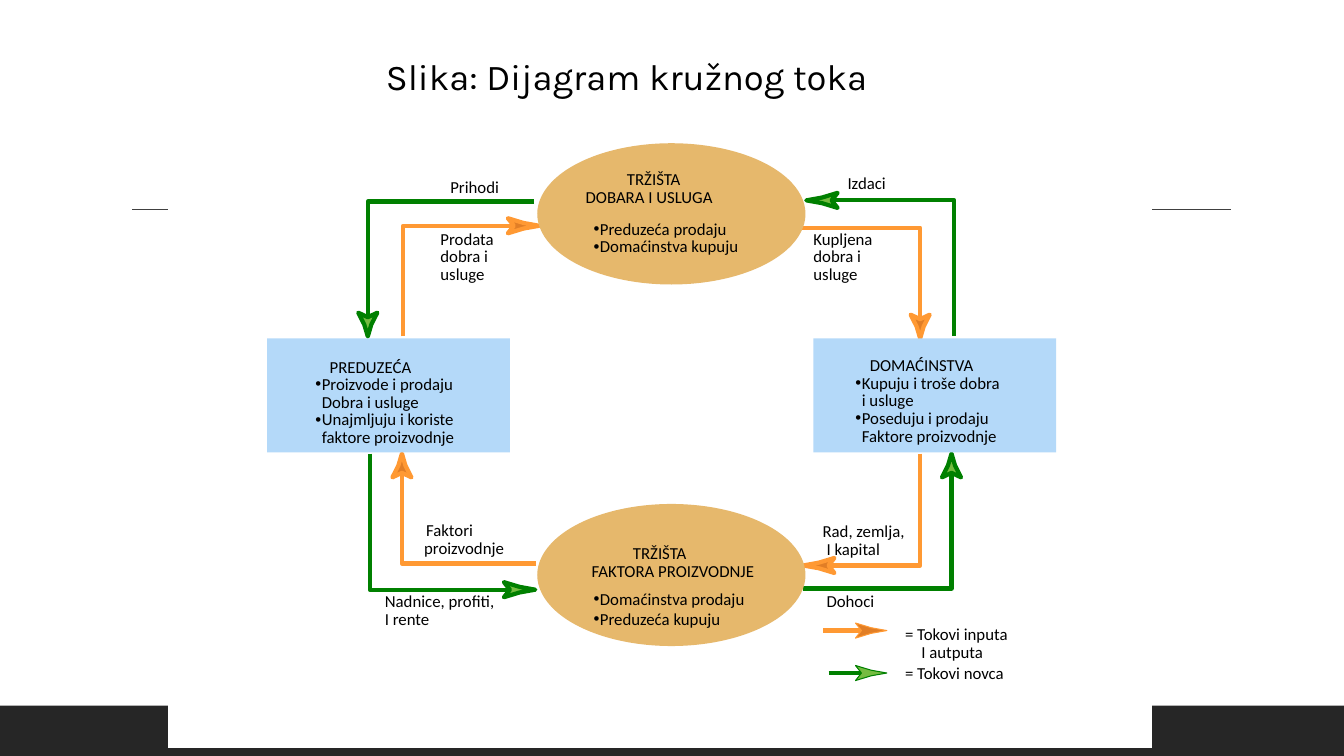
from pptx import Presentation
from pptx.dml.color import RGBColor
from pptx.enum.shapes import MSO_CONNECTOR, MSO_SHAPE
from pptx.enum.text import MSO_ANCHOR, PP_ALIGN
from pptx.oxml.ns import qn
from pptx.util import Cm, Pt
from lxml import etree

RECTANGLE, OVAL = MSO_SHAPE.RECTANGLE, MSO_SHAPE.OVAL
STRAIGHT = MSO_CONNECTOR.STRAIGHT
LEFT, CENTER = PP_ALIGN.LEFT, PP_ALIGN.CENTER
TOP, MIDDLE = MSO_ANCHOR.TOP, MSO_ANCHOR.MIDDLE

BLACK = RGBColor(0x00, 0x00, 0x00)
WHITE = RGBColor(0xFF, 0xFF, 0xFF)
CHARCOAL = RGBColor(0x26, 0x26, 0x26)
GRAY = RGBColor(0x40, 0x40, 0x40)
BLUE = RGBColor(0xB4, 0xD9, 0xF9)
SAND = RGBColor(0xE6, 0xB8, 0x6C)
# Line colour and arrowhead fill of each kind of flow
MONEY = RGBColor(0x00, 0x80, 0x00), RGBColor(0x75, 0xBC, 0x40)
GOODS = RGBColor(0xFF, 0x99, 0x33), RGBColor(0xE1, 0x7E, 0x26)

NATURAL_LINE = 0.52  # height of a 12 pt line in cm
PITCH = 0.45
HANG = 0.16
NOTCH = 0.81  # depth of the arrowhead's notch as a share of its length


class DiagramSlide:
    def __init__(self, deck):
        self.page = deck.slides.add_slide(deck.slide_layouts[6])
        self.shapes = self.page.shapes

    def shape(self, kind, bounds, fill):
        shape = self.shapes.add_shape(kind, *map(Cm, bounds))
        shape.shadow.inherit = False
        shape.fill.solid()
        shape.fill.fore_color.rgb = fill
        shape.line.fill.background()

    def line(self, start, end, color, weight):
        line = self.shapes.add_connector(STRAIGHT, *map(Cm, start + end))
        line.line.color.rgb = color
        line.line.width = Pt(weight)
        etree.SubElement(line._element.spPr, qn("a:effectLst"))

    def outline(self, points, color, weight=3, fill=None):
        """Draw a path; it is closed when it has a fill."""
        corners = [(Cm(x), Cm(y)) for x, y in points]
        builder = self.shapes.build_freeform(*corners[0])
        builder.add_line_segments(corners[1:], close=fill is not None)
        shape = builder.convert_to_shape()
        shape.shadow.inherit = False
        shape.line.color.rgb = color
        shape.line.width = Pt(weight)
        if fill is None:
            shape.fill.background()
        else:
            shape.fill.solid()
            shape.fill.fore_color.rgb = fill

    def arrowhead(self, before, tip, colors, weight=3):
        """Draw a head pointing from before to tip; return its notch point."""
        dx, dy = tip[0] - before[0], tip[1] - before[1]
        horizontal = abs(dx) > abs(dy)
        length, half = (0.79, 0.19) if horizontal else (0.6, 0.24)
        sign = 1 if dx + dy > 0 else -1

        def place(back, side):
            along, across = -sign * back * length, side * half
            if horizontal:
                return tip[0] + along, tip[1] + across
            return tip[0] + across, tip[1] + along

        profile = [(NOTCH, 0), (1, -1), (0.5, -0.37), (0, 0), (0.5, 0.37), (1, 1)]
        points = [place(back, side) for back, side in profile]
        self.outline(points, colors[0], weight, fill=colors[1])
        return points[0]

    def flow(self, colors, start, corner, tip):
        notch = self.arrowhead(corner, tip, colors)
        self.outline([start, corner, notch], colors[0])

    def text(self, bounds, lines, font="Calibri", size=12, align=LEFT,
             anchor=TOP, margins=(0, 0), spacing=None, indents=(), bullets=False):
        box = self.shapes.add_textbox(*map(Cm, bounds))
        frame = box.text_frame
        frame.word_wrap = True
        frame.vertical_anchor = anchor
        frame.margin_left = frame.margin_right = Cm(margins[0])
        frame.margin_top = frame.margin_bottom = Cm(margins[1])
        for index, line in enumerate(lines):
            para = frame.paragraphs[0] if index == 0 else frame.add_paragraph()
            para.text = line
            para.alignment = align
            para.line_spacing = spacing
            properties = para._p.get_or_add_pPr()
            if bullets:
                properties.set("marL", str(Cm(HANG)))
                properties.set("indent", str(-Cm(HANG)))
                etree.SubElement(properties, qn("a:buFont"), typeface="Arial")
                etree.SubElement(properties, qn("a:buChar"), char="•")
            elif indents:
                properties.set("marL", str(Cm(indents[index])))
            for span in para.runs:
                span.font.name = font
                span.font.size = Pt(size)
                span.font.color.rgb = BLACK

    def label(self, left, top, width, lines, pitch=PITCH, **style):
        """Place 12 pt lines at a fixed pitch, the first one at its natural height."""
        count = sum(1 + line.count("\v") for line in lines)
        bounds = left, top + NATURAL_LINE - pitch, width, count * pitch
        self.text(bounds, lines, spacing=Cm(pitch), **style)


def main():
    deck = Presentation()
    deck.slide_width, deck.slide_height = Cm(33.87), Cm(19.05)
    slide = DiagramSlide(deck)

    slide.shape(RECTANGLE, (0, 17.78, 33.87, 1.27), CHARCOAL)
    slide.line((3.33, 5.28), (31.01, 5.28), GRAY, 1)
    slide.text((0.56, 1.07, 30.48, 1.9), ["Slika: Dijagram kružnog toka"],
               font="Karla", size=26, align=CENTER, anchor=MIDDLE,
               margins=(0.3, 0.15), spacing=0.8)
    slide.shape(RECTANGLE, (4.24, 2.64, 24.79, 16.21), WHITE)

    for flow in [
        (MONEY, (13.46, 5.08), (9.27, 5.08), (9.27, 8.48)),
        (GOODS, (10.16, 8.48), (10.16, 5.69), (13.59, 5.69)),
        (MONEY, (9.32, 11.43), (9.32, 14.86), (13.49, 14.86)),
        (GOODS, (13.51, 14.2), (10.13, 14.2), (10.13, 11.43)),
        (MONEY, (24.05, 8.46), (24.05, 5.05), (20.32, 5.05)),
        (GOODS, (20.22, 5.74), (23.19, 5.74), (23.19, 8.53)),
        (MONEY, (20.24, 14.83), (23.98, 14.83), (23.98, 11.43)),
        (GOODS, (23.19, 11.43), (23.19, 14.25), (20.24, 14.25)),
    ]:
        slide.flow(*flow)

    for colors, left, middle in [(GOODS, 20.75, 15.89), (MONEY, 20.88, 16.96)]:
        slide.line((left, middle), (left + 0.99, middle), colors[0], 3)
        slide.arrowhead((left, middle), (22.35, middle), colors, weight=0.75)

    for left, top, width, lines, indents in [
        (21.36, 4.34, 1.2, ["Izdaci"], ()),
        (20.5, 5.74, 1.7, ["Kupljena", "dobra i", "usluge"], ()),
        (11.35, 4.45, 1.4, ["Prihodi"], ()),
        (11.1, 5.74, 1.6, ["Prodata", "dobra i", "usluge"], ()),
        (20.73, 13.11, 2.3, ["Rad, zemlja,", "I kapital"], (0, 0.1)),
        (20.83, 14.88, 1.5, ["Dohoci"], ()),
        (22.81, 15.7, 3, ["= Tokovi inputa", "I autputa"], (0, 0.41)),
        (22.81, 16.69, 3, ["= Tokovi novca"], ()),
        (10.69, 13.08, 2.3, ["Faktori", "proizvodnje"], (0.05, 0)),
        (9.7, 14.88, 3.1, ["Nadnice, profiti,", "I rente"], ()),
    ]:
        slide.label(left, top, width, lines, indents=indents)

    for kind, bounds, fill, heading, indents, heading_at, items, items_at, pitch in [
        (RECTANGLE, (6.73, 8.53, 6.12, 2.87), BLUE, ["PREDUZEĆA"], (), (8.31, 8.99),
         ["Proizvode i prodaju\vDobra i usluge",
          "Unajmljuju i koriste\vfaktore proizvodnje"], (7.95, 9.4), PITCH),
        (RECTANGLE, (20.5, 8.53, 6.12, 2.87), BLUE, ["DOMAĆINSTVA"], (), (21.92, 8.92),
         ["Kupuju i troše dobra\vi usluge",
          "Poseduju i prodaju\vFaktore proizvodnje"], (21.56, 9.37), PITCH),
        (OVAL, (13.54, 12.7, 6.76, 3.58), SAND, ["TRŽIŠTA", "FAKTORA PROIZVODNJE"],
         (1.04, 0), (14.91, 13.67),
         ["Domaćinstva prodaju", "Preduzeća kupuju"], (14.96, 14.83), 0.5),
        (OVAL, (13.54, 3.61, 6.76, 3.56), SAND, ["TRŽIŠTA", "DOBARA I USLUGA"],
         (1.04, 0), (14.76, 4.24),
         ["Preduzeća prodaju", "Domaćinstva kupuju"], (14.96, 5.49), PITCH),
    ]:
        slide.shape(kind, bounds, fill)
        slide.label(*heading_at, 4.5, heading, indents=indents)
        slide.label(*items_at, 4.5, items, pitch=pitch, bullets=True)

    deck.save("out.pptx")


if __name__ == "__main__":
    main()
